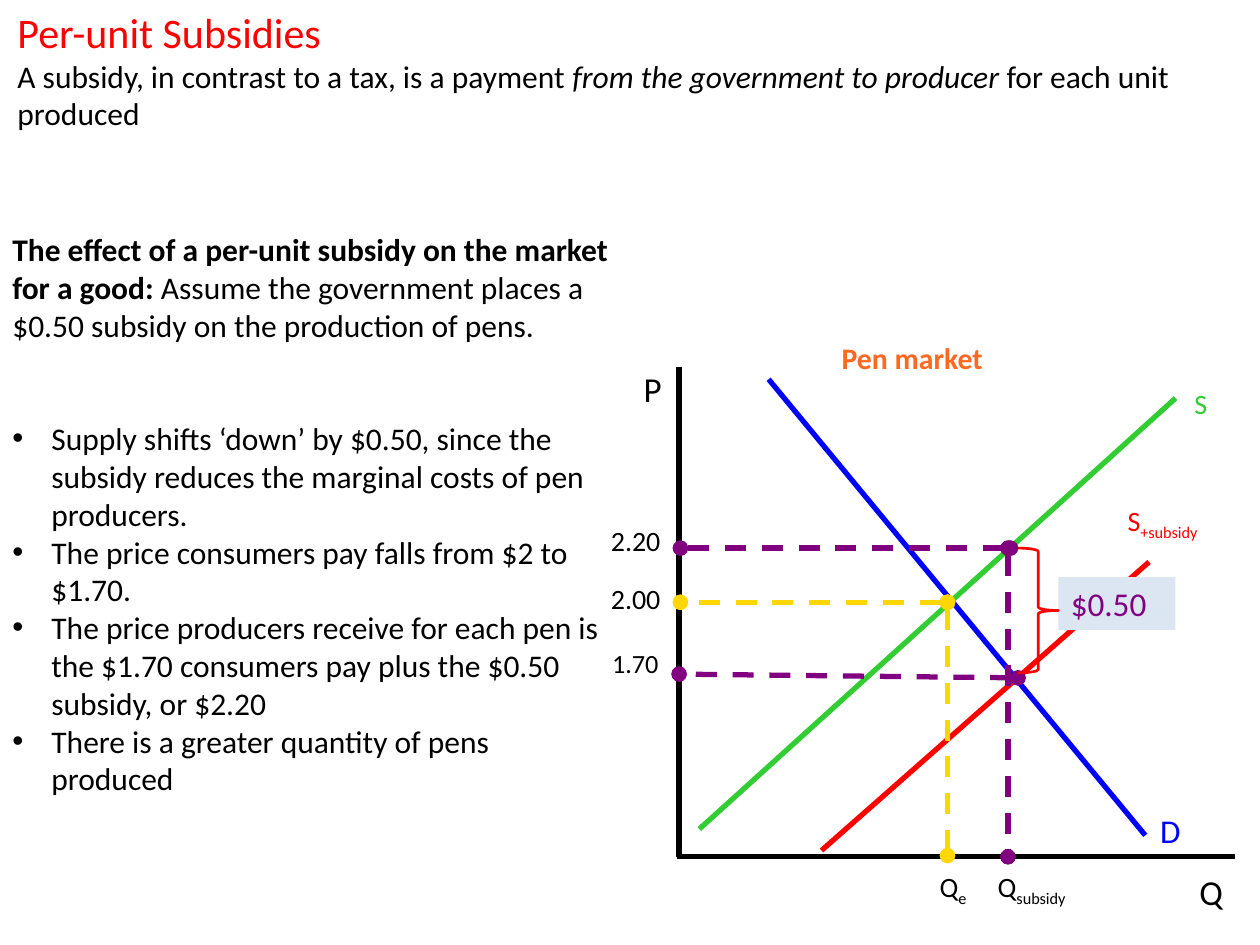
from lxml import etree
from pptx import Presentation
from pptx import util as u
from pptx.dml.color import RGBColor
from pptx.enum import dml, shapes, text
from pptx.oxml import ns

PX = u.Inches(1) // 100
FONT = "Calibri"
BLACK = RGBColor(0x00, 0x00, 0x00)
RED = RGBColor(0xFF, 0x00, 0x00)
BLUE = RGBColor(0x00, 0x00, 0xFF)
GREEN = RGBColor(0x32, 0xCD, 0x32)
GOLD = RGBColor(0xFF, 0xD7, 0x00)
PURPLE = RGBColor(0x80, 0x00, 0x80)
ORANGE = RGBColor(0xFF, 0x68, 0x20)
PALE_BLUE = RGBColor(0xDC, 0xE6, 0xF2)

AXES = [(539, 291, 539, 680), (537, 680, 980, 680)]
CURVES = [
    ((610, 301, 909, 663), BLUE),
    ((555, 658, 933, 316), GREEN),
    ((652, 675, 912, 446), RED),
]
GUIDES = [
    ((752, 478, 752, 679), GOLD),
    ((802, 435, 540, 435), PURPLE),
    ((800, 435, 800, 680), PURPLE),
    ((808, 538, 539, 535), PURPLE),
    ((752, 478, 540, 478), GOLD),
]
LABELS = [
    ((938, 302, 51, 37), "S", "", 16, GREEN),
    ((911, 638, 56, 42), "D", "", 19, BLUE),
    ((942, 686, 59, 44), "Q", "", 20, BLACK),
    ((501, 287, 54, 44), "P", "", 20, BLACK),
    ((736, 685, 67, 37), "Q", "e", 16, BLACK),
    ((885, 395, 95, 37), "S", "+subsidy", 16, RED),
    ((782, 685, 103, 37), "Q", "subsidy", 16, BLACK),
    ((475, 411, 79, 37), "2.20", "", 16, BLACK),
    ((475, 457, 75, 37), "2.00", "", 16, BLACK),
    ((476, 509, 74, 35), "1.70", "", 15, BLACK),
]
EFFECTS = [
    "Supply shifts ‘down’ by $0.50, since the subsidy reduces the marginal costs of pen producers.",
    "The price consumers pay falls from $2 to $1.70.",
    "The price producers receive for each pen is the $1.70 consumers pay plus the $0.50 subsidy, or $2.20",
    "There is a greater quantity of pens produced",
]


def px(*values):
    """Convert pixel lengths to EMU."""
    return [value * PX for value in values]


def write(paragraph, content, size=18, color=BLACK, bold=False, italic=False, subscript=False):
    """Append one formatted run to a paragraph."""
    run = paragraph.add_run()
    run.text = content
    run.font.name = FONT
    run.font.size = u.Pt(size)
    run.font.color.rgb = color
    run.font.bold = bold
    run.font.italic = italic
    if subscript:
        run.font._element.set("baseline", "-25000")


def add_text_box(slide, box):
    """Add a wrapping text box and return its text frame."""
    frame = slide.shapes.add_textbox(*px(*box)).text_frame
    frame.word_wrap = True
    return frame


def add_label(slide, box, content, subscript, size, color):
    """Add a chart label with an optional subscript."""
    paragraph = add_text_box(slide, box).paragraphs[0]
    write(paragraph, content, size=size, color=color)
    if subscript:
        write(paragraph, subscript, size=size, color=color, subscript=True)


def add_line(slide, ends, color, guide=False):
    """Add a straight line, dashed with oval ends if it is a guide."""
    line = slide.shapes.add_connector(shapes.MSO_CONNECTOR.STRAIGHT, *px(*ends))
    line.line.color.rgb = color
    line.line.width = u.Pt(3)
    properties = line._element.spPr
    if guide:
        line.line.dash_style = dml.MSO_LINE.DASH
        outline = properties.find(ns.qn("a:ln"))
        for end in ("a:headEnd", "a:tailEnd"):
            etree.SubElement(outline, ns.qn(end), type="oval")
    etree.SubElement(properties, ns.qn("a:effectLst"))


def add_bullet(frame, content):
    """Append a bulleted paragraph with a hanging indent."""
    paragraph = frame.add_paragraph()
    write(paragraph, content)
    properties = paragraph._p.get_or_add_pPr()
    properties.set("marL", str(31 * PX))
    properties.set("indent", str(-31 * PX))
    etree.SubElement(properties, ns.qn("a:buFont"), typeface="Arial")
    etree.SubElement(properties, ns.qn("a:buChar"), char="•")
    return paragraph


def add_heading(slide):
    """Add the title and the definition of a subsidy."""
    frame = add_text_box(slide, (4, 0, 996, 111))
    write(frame.paragraphs[0], "Per-unit Subsidies", size=24, color=RED)
    definition = frame.add_paragraph()
    write(definition, "A subsidy, in contrast to a tax, is a payment ")
    write(definition, "from the government to producer", italic=True)
    write(definition, " for each unit produced")


def add_explanation(slide):
    """Add the example and its bulleted effects."""
    frame = add_text_box(slide, (0, 178, 500, 495))
    example = frame.paragraphs[0]
    write(example, "The effect of a per-unit subsidy on the market for a good: ", bold=True)
    write(example, "Assume the government places a $0.50 subsidy on the production of pens.")
    bullets = [add_bullet(frame, effect) for effect in EFFECTS]
    bullets[0].space_before = u.Pt(43)


def add_subsidy_marker(slide):
    """Add the amount of the subsidy and the brace that spans it."""
    amount = slide.shapes.add_shape(shapes.MSO_SHAPE.RECTANGLE, *px(840, 458, 93, 42))
    amount.shadow.inherit = False
    amount.fill.solid()
    amount.fill.fore_color.rgb = PALE_BLUE
    amount.line.fill.background()
    amount.text_frame.vertical_anchor = text.MSO_ANCHOR.TOP
    paragraph = amount.text_frame.paragraphs[0]
    paragraph.alignment = text.PP_ALIGN.LEFT
    write(paragraph, "$0.50", size=19, color=PURPLE)
    brace = slide.shapes.add_shape(shapes.MSO_SHAPE.RIGHT_BRACE, *px(808, 435, 32, 99))
    brace.shadow.inherit = False
    brace.fill.background()
    brace.line.color.rgb = RED
    brace.line.width = u.Pt(1.5)


def add_market_diagram(slide):
    """Add the supply and demand diagram."""
    title = add_text_box(slide, (632, 265, 184, 39)).paragraphs[0]
    title.alignment = text.PP_ALIGN.CENTER
    write(title, "Pen market", size=17, color=ORANGE, bold=True)
    for ends in AXES:
        add_line(slide, ends, BLACK)
    for ends, color in CURVES:
        add_line(slide, ends, color)
    for ends, color in GUIDES:
        add_line(slide, ends, color, guide=True)
    for label in LABELS:
        add_label(slide, *label)
    add_subsidy_marker(slide)


def main():
    """Build and save the slide."""
    presentation = Presentation()
    presentation.slide_width, presentation.slide_height = px(1000, 750)
    slide = presentation.slides.add_slide(presentation.slide_layouts[6])
    add_heading(slide)
    add_market_diagram(slide)
    add_explanation(slide)
    presentation.save("out.pptx")


if __name__ == "__main__":
    main()
